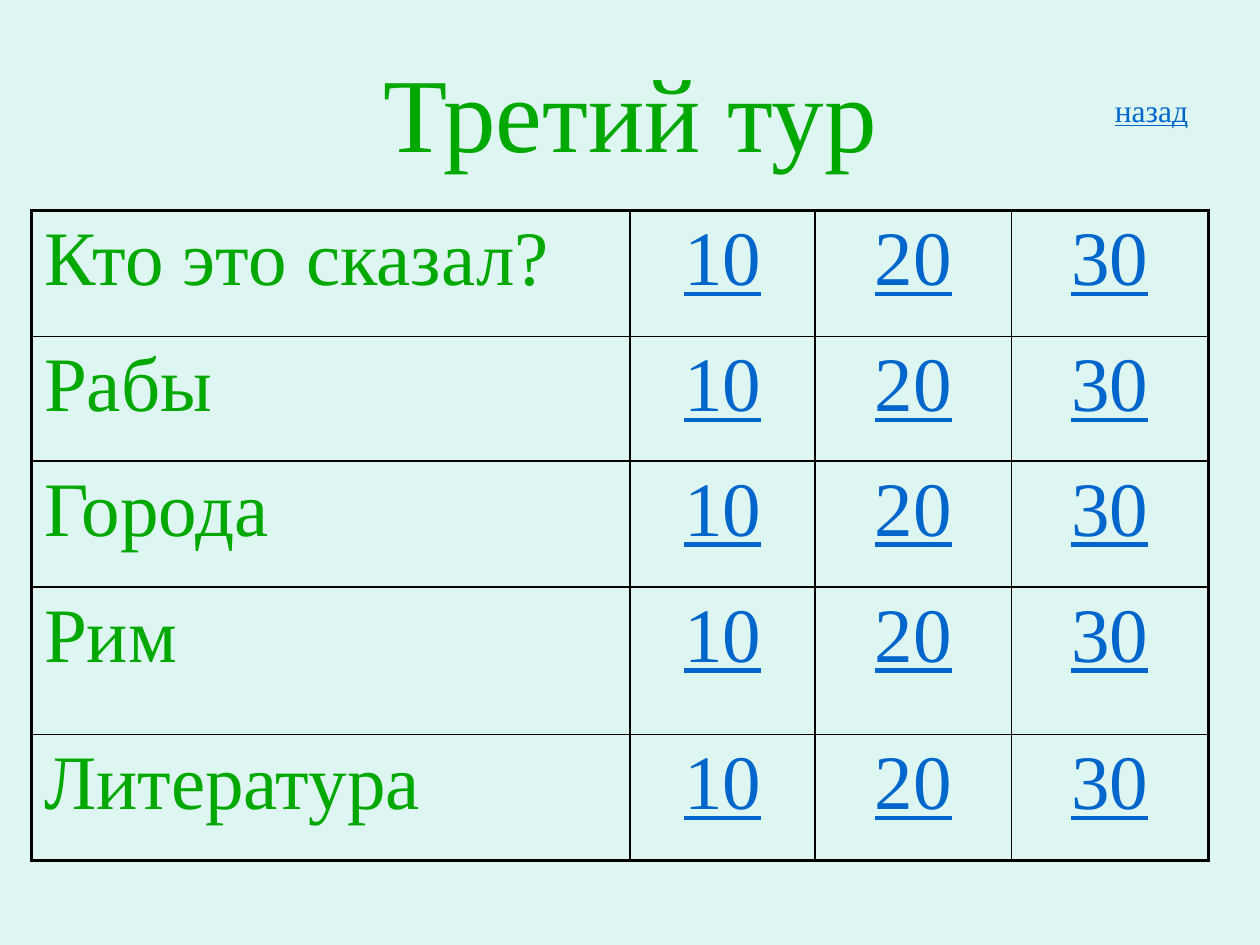
from lxml import etree
from pptx import Presentation
from pptx.dml.color import RGBColor
from pptx.enum.text import MSO_ANCHOR, PP_ALIGN
from pptx.oxml.ns import qn
from pptx.util import Inches, Pt

LEFT, CENTER = PP_ALIGN.LEFT, PP_ALIGN.CENTER
TOP, MIDDLE = MSO_ANCHOR.TOP, MSO_ANCHOR.MIDDLE
COLORS = {"page": "DEF6F1", "text": "00A800", "link": "0066CC", "border": "000000"}
FONT = "Times New Roman"
TOPICS = ["Кто это сказал?", "Рабы", "Города", "Рим", "Литература"]
POINTS = ["10", "20", "30"]
COLUMN_WIDTHS = [4.75, 1.47, 1.56, 1.56]
ROW_HEIGHTS = [1, 0.99, 1, 1.17, 1]
OUTER_WIDTH, INNER_WIDTH = 2.25, 1


def write_text(frame, text, size, color, align=LEFT, underline=False):
    """Write one formatted line into a text frame."""
    para = frame.paragraphs[0]
    para.alignment = align
    span = para.add_run()
    span.text = text
    formats = {"name": FONT, "size": Pt(size), "underline": underline}
    for name, value in formats.items():
        setattr(span.font, name, value)
    span.font.color.rgb = RGBColor.from_string(COLORS[color])


def add_label(page, box, text, size, color, anchor=TOP, wrap=True, **style):
    """Add a text box holding one line."""
    frame = page.shapes.add_textbox(*map(Inches, box)).text_frame
    frame.word_wrap = wrap
    frame.vertical_anchor = anchor
    write_text(frame, text, size, color, **style)


def set_borders(cell, widths):
    """Draw the four sides of a cell with widths in points."""
    properties = cell._tc.get_or_add_tcPr()
    for index, (side, width) in enumerate(widths.items()):
        line = etree.Element(qn(f"a:ln{side}"), w=str(Pt(width)))
        fill = etree.SubElement(line, qn("a:solidFill"))
        etree.SubElement(fill, qn("a:srgbClr"), val=COLORS["border"])
        properties.insert(index, line)


def add_score_table(page, box):
    """Add the grid of topics and point values."""
    last_row, last_column = len(TOPICS) - 1, len(POINTS)
    table = page.shapes.add_table(
        last_row + 1, last_column + 1, *map(Inches, box)
    ).table
    table.first_row = table.horz_banding = False
    for column, width in zip(table.columns, COLUMN_WIDTHS):
        column.width = Inches(width)
    for row, height in zip(table.rows, ROW_HEIGHTS):
        row.height = Inches(height)
    for r, topic in enumerate(TOPICS):
        for c, text in enumerate([topic, *POINTS]):
            cell = table.cell(r, c)
            cell.fill.background()
            if c:
                write_text(cell.text_frame, text, 44, "link", CENTER, True)
            else:
                write_text(cell.text_frame, text, 44, "text")
            edges = {"L": c == 0, "R": c == last_column, "T": r == 0, "B": r == last_row}
            set_borders(cell, {
                side: OUTER_WIDTH if outer else INNER_WIDTH
                for side, outer in edges.items()
            })


def main():
    """Build and save the deck."""
    deck = Presentation()
    deck.slide_width, deck.slide_height = Inches(10), Inches(7.5)
    page = deck.slides.add_slide(deck.slide_layouts[6])
    page.background.fill.solid()
    page.background.fill.fore_color.rgb = RGBColor.from_string(COLORS["page"])
    add_label(page, (0.5, 0.25, 9, 1.25), "Третий тур", 60, "text",
              anchor=MIDDLE, align=CENTER)
    add_score_table(page, (0.25, 1.67, 9.33, 5.16))
    add_label(page, (8.75, 0.67, 0.78, 0.4), "назад", 18, "link",
              wrap=False, underline=True)
    deck.save("out.pptx")


if __name__ == "__main__":
    main()
